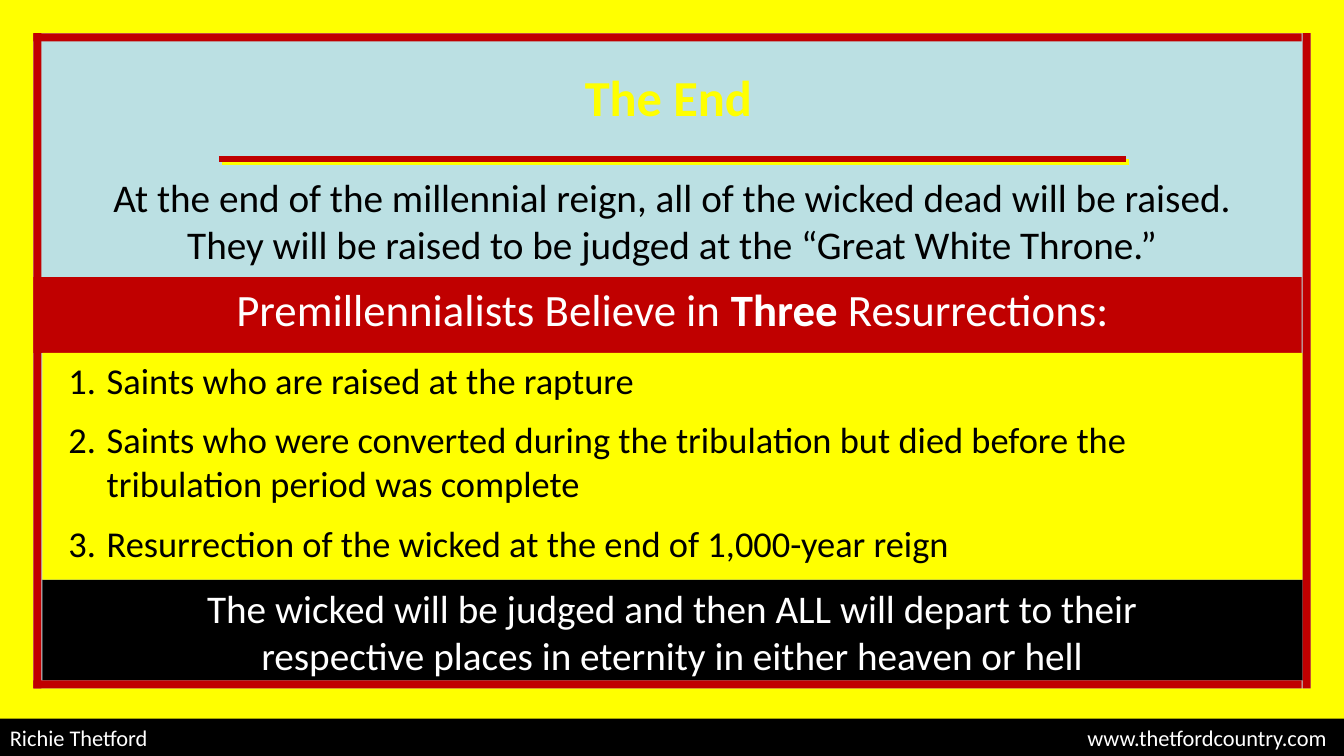
import pptx
import pptx.util
import pptx.dml.color
import pptx.enum.shapes
import pptx.enum.text
import pptx.oxml
import pptx.oxml.ns
from pptx.util import Inches

YELLOW, RED, BLACK, WHITE = "FFFF00", "C00000", "000000", "FFFFFF"
ALIGN = pptx.enum.text.PP_ALIGN
DRAWING = pptx.oxml.ns.nsdecls("a")


def paint(color_owner, color):
    """Give a fill a solid colour from a hex string."""
    color_owner.solid()
    color_owner.fore_color.rgb = pptx.dml.color.RGBColor.from_string(color)


def write(paragraph, runs, size, color, align=ALIGN.LEFT):
    """Add (text, bold) runs; a newline in a text becomes a line break."""
    paragraph.alignment = align
    for text, bold in runs:
        for index, line in enumerate(text.split("\n")):
            if index:
                paragraph.add_line_break()
            run = paragraph.add_run()
            run.text = line
            run.font.name = "Calibri"
            run.font.size = pptx.util.Pt(size)
            run.font.bold = bold
            paint(run.font.fill, color)


presentation = pptx.Presentation()
presentation.slide_width = Inches(13.33)
presentation.slide_height = Inches(7.5)
slide = presentation.slides.add_slide(presentation.slide_layouts[5])
paint(slide.background.fill, "BBE0E3")

# Title
title = slide.shapes.title
title.left, title.top = Inches(2.17), Inches(0.58)
title.width, title.height = Inches(8.92), Inches(0.75)
title.text_frame.word_wrap = False
title.text_frame.auto_size = pptx.enum.text.MSO_AUTO_SIZE.NONE
title.text_frame.vertical_anchor = pptx.enum.text.MSO_ANCHOR.MIDDLE
title_paragraph = title.text_frame.paragraphs[0]
write(title_paragraph, [("The End", True)], 36, YELLOW, ALIGN.CENTER)
title_paragraph.runs[0].font._element.insert(0, pptx.oxml.parse_xml(
    f'<a:ln {DRAWING} w="25400"><a:solidFill><a:srgbClr val="FF0000"/></a:solidFill></a:ln>'))

# Bands, outer border, inner frame and footer bar, from back to front
rectangles = [
    (0.42, 5.75, 12.5, 1, BLACK),
    (0.33, 2.75, 12.58, 0.75, RED),
    (0.42, 3.5, 12.5, 2.25, YELLOW),
    (0, 0, 0.33, 7.08, YELLOW),
    (13, 0, 0.33, 7, YELLOW),
    (0, 0, 13.33, 0.33, YELLOW),
    (0, 6.83, 13.33, 0.33, YELLOW),
    (0.33, 0.33, 0.08, 6.5, RED),
    (0.33, 0.33, 12.58, 0.08, RED),
    (0.33, 6.75, 12.58, 0.08, RED),
    (12.92, 0.33, 0.08, 6.5, RED),
    (0, 7.13, 13.33, 0.37, BLACK),
]
for left, top, width, height, color in rectangles:
    shape = slide.shapes.add_shape(
        pptx.enum.shapes.MSO_SHAPE.RECTANGLE,
        Inches(left), Inches(top), Inches(width), Inches(height))
    shape.shadow.inherit = False
    paint(shape.fill, color)
    shape.line.fill.background()

# The last rectangle is the footer bar; a right tab places the address
footer = shape
footer_paragraph = footer.text_frame.paragraphs[0]
write(footer_paragraph, [("Richie Thetford\twww.thetfordcountry.com", False)], 16, WHITE)
footer_paragraph._p.get_or_add_pPr().append(pptx.oxml.parse_xml(
    f'<a:tabLst {DRAWING}><a:tab pos="{Inches(13.06)}" algn="r"/></a:tabLst>'))

# Rule under the title
rule = slide.shapes.add_connector(
    pptx.enum.shapes.MSO_CONNECTOR.STRAIGHT,
    Inches(2.17), Inches(1.58), Inches(11.17), Inches(1.58))
paint(rule.line.fill, RED)
rule.line.width = pptx.util.Pt(4.5)
rule._element.spPr.append(pptx.oxml.parse_xml(
    f'<a:effectLst {DRAWING}><a:outerShdw dist="{pptx.util.Pt(2.8)}" dir="2700000" algn="ctr">'
    f'<a:srgbClr val="{YELLOW}"/></a:outerShdw></a:effectLst>'))

# Text over the bands: each paragraph is a list of runs
statements = [
    (0.5, 1.67, 12.33, 1.04, 28, BLACK, [
        [("At the end of the millennial reign, all of the wicked dead will be raised.\n"
          "They will be raised to be judged at the “Great White Throne.”", False)]]),
    (2.17, 2.75, 9, 0.64, 32, WHITE, [
        [("Premillennialists Believe in ", False), ("Three", True), (" Resurrections:", False)]]),
    (0.58, 3.5, 12.25, 2.29, 26, BLACK, [
        [("Saints who are raised at the rapture", False)],
        [("Saints who were converted during the tribulation but died before the "
          "tribulation period was complete", False)],
        [("Resurrection of the wicked at the end of 1,000-year reign", False)]]),
    (0.5, 5.75, 12.33, 1.04, 28, WHITE, [
        [("The wicked will be judged and then ALL will depart to their\n"
          "respective places in eternity in either heaven or hell", False)]]),
]
for left, top, width, height, size, color, paragraphs in statements:
    text_frame = slide.shapes.add_textbox(
        Inches(left), Inches(top), Inches(width), Inches(height)).text_frame
    text_frame.word_wrap = True
    numbered = len(paragraphs) > 1
    for index, runs in enumerate(paragraphs):
        paragraph = text_frame.add_paragraph() if index else text_frame.paragraphs[0]
        write(paragraph, runs, size, color, ALIGN.LEFT if numbered else ALIGN.CENTER)
        if index:
            paragraph.space_before = pptx.util.Pt(11.5)
        if numbered:
            properties = paragraph._p.get_or_add_pPr()
            properties.set("marL", str(Inches(0.38)))
            properties.set("indent", str(-Inches(0.38)))
            properties.append(pptx.oxml.parse_xml(
                f'<a:buAutoNum {DRAWING} type="arabicPeriod"/>'))

presentation.save("out.pptx")
